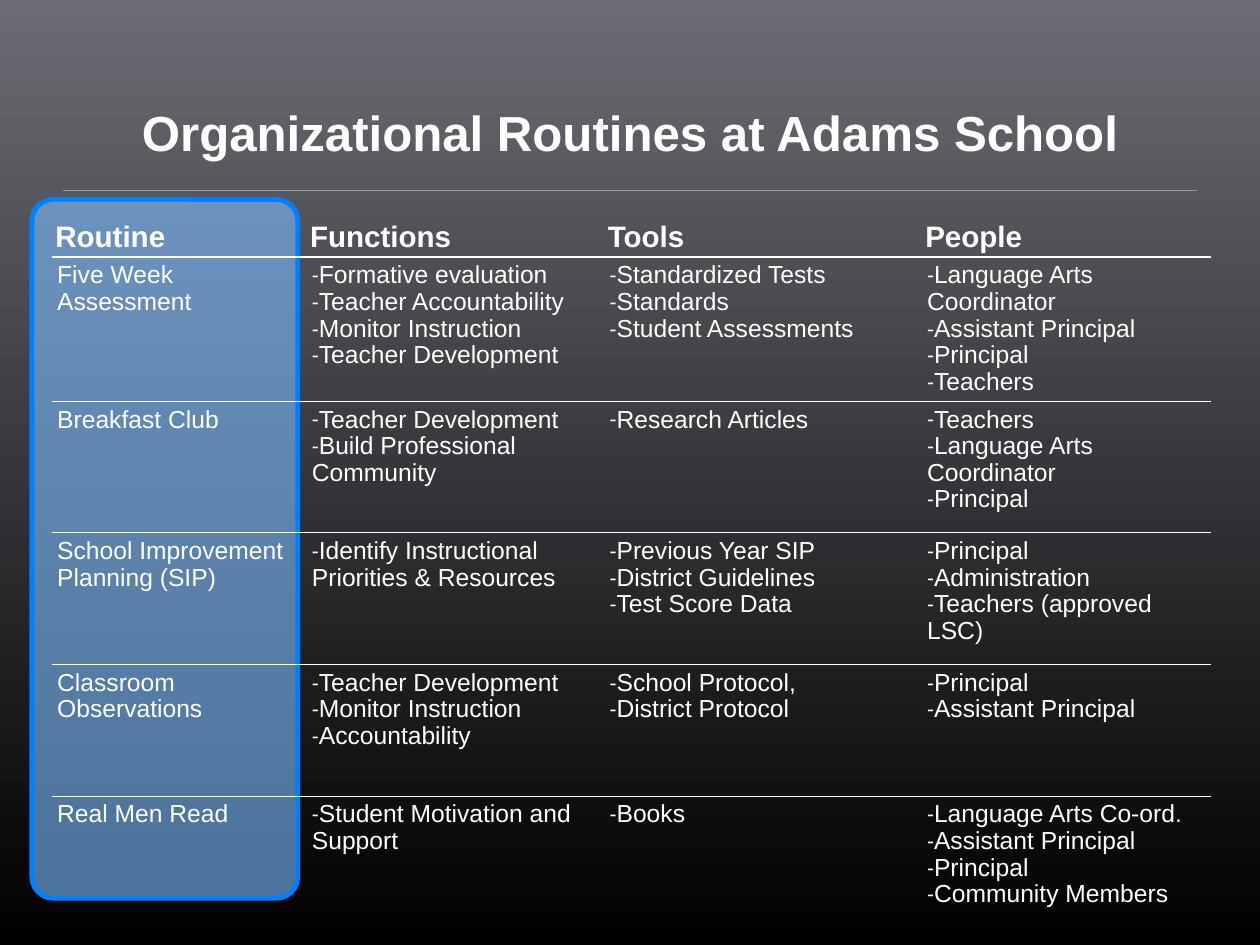
from lxml.etree import SubElement
from pptx import Presentation
from pptx.dml.color import RGBColor
from pptx.enum.shapes import MSO_CONNECTOR, MSO_SHAPE
from pptx.enum.text import MSO_ANCHOR, PP_ALIGN
from pptx.oxml.ns import qn
from pptx.util import Pt

FONT = "Arial"
COLORS = {
    "background_top": "6C6C74",
    "background_bottom": "000000",
    "text": "FFFFFF",
    "rule": "9A9A9A",
    "highlight": "7CBCFF",
    "highlight_edge": "0080FF",
}
COLUMN_WIDTHS = [207, 242, 258, 235]
ROW_HEIGHTS = [71, 107, 107, 107, 107, 104]
HEADINGS = ["Routine", "Functions", "Tools", "People"]
ROUTINES = [
    ("Five Week Assessment",
     ["Formative evaluation", "Teacher Accountability",
      "Monitor Instruction", "Teacher Development"],
     ["Standardized Tests", "Standards", "Student Assessments"],
     ["Language Arts Coordinator", "Assistant Principal",
      "Principal", "Teachers"]),
    ("Breakfast Club",
     ["Teacher Development", "Build Professional Community"],
     ["Research Articles"],
     ["Teachers", "Language Arts Coordinator", "Principal"]),
    ("School Improvement Planning (SIP)",
     ["Identify Instructional Priorities & Resources"],
     ["Previous Year SIP", "District Guidelines", "Test Score Data"],
     ["Principal", "Administration", "Teachers (approved LSC)"]),
    ("Classroom Observations",
     ["Teacher Development", "Monitor Instruction", "Accountability"],
     ["School Protocol,", "District Protocol"],
     ["Principal", "Assistant Principal"]),
    ("Real Men Read",
     ["Student Motivation and Support"],
     ["Books"],
     ["Language Arts Co-ord.", "Assistant Principal",
      "Principal", "Community Members"]),
]


def color(name):
    return RGBColor.from_string(COLORS[name])


def set_background(slide):
    fill = slide.background.fill
    fill.gradient()
    fill.gradient_angle = 270
    names = ("background_top", "background_bottom")
    for position, (stop, name) in enumerate(zip(fill.gradient_stops, names)):
        stop.color.rgb = color(name)
        stop.position = position


def format_text(text_frame, size, bold):
    for paragraph in text_frame.paragraphs:
        for run in paragraph.runs:
            run.font.name = FONT
            run.font.size = Pt(size)
            run.font.bold = bold
            run.font.color.rgb = color("text")


def set_margins(holder, margin):
    holder.margin_left = holder.margin_right = Pt(margin)
    holder.margin_top = holder.margin_bottom = Pt(margin)


def set_title(slide, text):
    title = slide.shapes.title
    title.left, title.top, title.width, title.height = Pt(45), Pt(26), Pt(934), Pt(110)
    text_frame = title.text_frame
    text_frame.text = text
    text_frame.vertical_anchor = MSO_ANCHOR.BOTTOM
    set_margins(text_frame, 4.5)
    text_frame.paragraphs[0].alignment = PP_ALIGN.CENTER
    format_text(text_frame, 40, True)


def add_rule(slide):
    rule = slide.shapes.add_connector(
        MSO_CONNECTOR.STRAIGHT, Pt(51), Pt(155), Pt(973), Pt(155))
    rule.line.color.rgb = color("rule")
    rule.line.width = Pt(0.75)
    SubElement(rule._element.spPr, qn("a:effectLst"))


def add_highlight(slide):
    shape = slide.shapes.add_shape(
        MSO_SHAPE.ROUNDED_RECTANGLE, Pt(26), Pt(162), Pt(216), Pt(568))
    shape.adjustments[0] = 0.08
    shape.shadow.inherit = False
    shape.fill.solid()
    shape.fill.fore_color.rgb = color("highlight")
    fill_color = shape._element.spPr.find(qn("a:solidFill"))[0]
    SubElement(fill_color, qn("a:alpha"), val="60000")
    shape.line.color.rgb = color("highlight_edge")
    shape.line.width = Pt(4)


def set_borders(cell, top, bottom):
    properties = cell._tc.get_or_add_tcPr()
    for side, width in (("L", 0), ("R", 0), ("T", top), ("B", bottom)):
        line = SubElement(properties, qn(f"a:ln{side}"), w=str(Pt(width)))
        if width:
            fill = SubElement(line, qn("a:solidFill"))
            SubElement(fill, qn("a:srgbClr"), val=COLORS["text"])
        else:
            SubElement(line, qn("a:noFill"))


def add_bullet(paragraph):
    properties = paragraph._p.get_or_add_pPr()
    properties.set("marL", "0")
    properties.set("indent", "0")
    bullet_color = SubElement(properties, qn("a:buClr"))
    SubElement(bullet_color, qn("a:srgbClr"), val=COLORS["text"])
    SubElement(properties, qn("a:buSzPct"), val="85000")
    SubElement(properties, qn("a:buFont"), typeface=FONT)
    SubElement(properties, qn("a:buChar"), char="-")


def fill_cell(cell, content, is_heading):
    bulleted = isinstance(content, list)
    cell.text_frame.text = "\n".join(content) if bulleted else content
    for paragraph in cell.text_frame.paragraphs:
        paragraph.line_spacing = 0.97
        if bulleted:
            add_bullet(paragraph)
    format_text(cell.text_frame, 24 if is_heading else 20, is_heading)
    set_margins(cell, 3 if is_heading else 4.5)
    cell.vertical_anchor = MSO_ANCHOR.BOTTOM if is_heading else MSO_ANCHOR.TOP


def add_routines_table(slide):
    rows = [HEADINGS, *ROUTINES]
    table = slide.shapes.add_table(
        len(rows), len(HEADINGS), Pt(42), Pt(138),
        Pt(sum(COLUMN_WIDTHS)), Pt(sum(ROW_HEIGHTS))).table
    table.first_row = table.horz_banding = False
    for column, width in zip(table.columns, COLUMN_WIDTHS):
        column.width = Pt(width)
    for row, height in zip(table.rows, ROW_HEIGHTS):
        row.height = Pt(height)
    line_widths = [0, 2] + [1] * (len(rows) - 2) + [0]
    for row_index, contents in enumerate(rows):
        for column_index, content in enumerate(contents):
            cell = table.cell(row_index, column_index)
            fill_cell(cell, content, row_index == 0)
            set_borders(cell, *line_widths[row_index:row_index + 2])
            cell.fill.background()


def main():
    presentation = Presentation()
    presentation.slide_width, presentation.slide_height = Pt(1024), Pt(768)
    slide = presentation.slides.add_slide(presentation.slide_layouts[5])
    set_background(slide)
    add_rule(slide)
    add_highlight(slide)
    set_title(slide, "Organizational Routines at Adams School")
    add_routines_table(slide)
    presentation.save("out.pptx")


if __name__ == "__main__":
    main()
